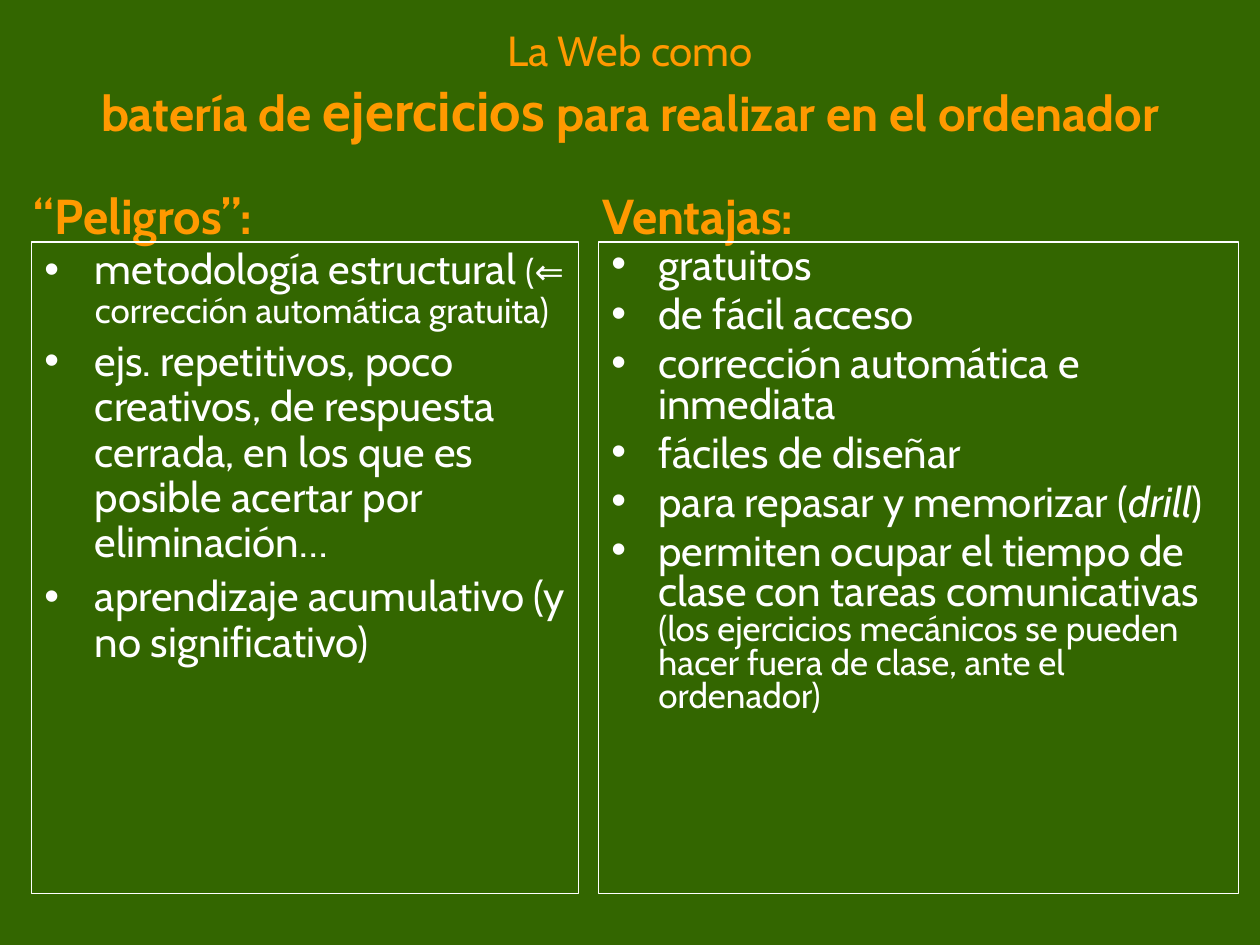
from dataclasses import dataclass

from lxml.etree import SubElement
from pptx import Presentation
from pptx.dml.color import RGBColor as RGB
from pptx.enum.text import MSO_ANCHOR as ANCHOR, MSO_AUTO_SIZE as AUTO, PP_ALIGN as ALIGN
from pptx.oxml.ns import qn
from pptx.util import Cm, Pt


@dataclass(frozen=True)
class Theme:
    font: str = "Cabin"
    back: RGB = RGB(0x33, 0x66, 0x00)
    accent: RGB = RGB(0xFF, 0x99, 0x00)
    text: RGB = RGB(0xFF, 0xFF, 0xFF)
    note: int = 20
    body: int = 24
    head: int = 28
    big: int = 32
    gap: int = 5
    border: float = 0.75


def add_text(p, text, font, size, color, bold=False, italic=False):
    r = p.add_run()
    r.text = text
    r.font.name = font
    r.font.size = Pt(size)
    r.font.color.rgb = color
    r.font.bold = bold
    r.font.italic = italic


class Deck:
    def __init__(self, theme):
        self.theme = theme
        self.prs = Presentation()
        self.prs.slide_width, self.prs.slide_height = Cm(25.4), Cm(19.05)

    def add_slide(self):
        self.s = self.prs.slides.add_slide(self.prs.slide_layouts.get_by_name("Comparison"))
        self.s.background.fill.solid()
        self.s.background.fill.fore_color.rgb = self.theme.back

    def place(self, idx, box, anchor):
        sp = next(ph for ph in self.s.placeholders if ph.placeholder_format.idx == idx)
        sp.left, sp.top, sp.width, sp.height = [Cm(v) for v in box]
        tf = sp.text_frame
        tf.word_wrap = True
        tf.auto_size = AUTO.NONE
        tf.vertical_anchor = anchor
        return sp

    def fill_text(self, tf, paragraphs, color):
        for i, runs in enumerate(paragraphs):
            p = tf.add_paragraph() if i else tf.paragraphs[0]
            for text, style in runs:
                add_text(p, text, self.theme.font, color=color, **style)
        return tf.paragraphs

    def title(self, box, lines):
        sp = self.place(0, box, ANCHOR.MIDDLE)
        for p in self.fill_text(sp.text_frame, lines, self.theme.accent):
            p.alignment = ALIGN.CENTER

    def heading(self, idx, box, text):
        sp = self.place(idx, box, ANCHOR.TOP)
        style = dict(size=self.theme.head, bold=True)
        for p in self.fill_text(sp.text_frame, [[(text, style)]], self.theme.accent):
            p.space_before = Pt(self.theme.gap)

    def bullets(self, idx, box, items, indent, spacing):
        sp = self.place(idx, box, ANCHOR.TOP)
        sp.line.color.rgb = self.theme.text
        sp.line.width = Pt(self.theme.border)
        for p in self.fill_text(sp.text_frame, items, self.theme.text):
            p.line_spacing = spacing
            p.space_before = Pt(self.theme.gap)
            pPr = p._p.get_or_add_pPr()
            pPr.set("marL", str(Cm(indent)))
            pPr.set("indent", str(-Cm(indent)))
            SubElement(pPr, qn("a:buChar")).set("char", "•")


def main():
    theme = Theme()
    body, note = dict(size=theme.body), dict(size=theme.note)
    strong = dict(size=theme.head, bold=True)
    top, height = 4.88, 13.13
    head_top, head_height = 3.61, 1.47

    deck = Deck(theme)
    deck.add_slide()
    deck.title((0, 0.2, 25.4, 2.97), [
        [("La Web como", body)],
        [("batería de ", strong),
         ("ejercicios", dict(size=theme.big, bold=True)),
         (" para realizar en el ordenador", strong)],
    ])
    deck.heading(1, (0.43, head_top, 8.46, head_height), "“Peligros”:")
    deck.bullets(2, (0.64, top, 11.02, height), [
        [("metodología estructural ", body),
         ("(⇐ corrección automática gratuita)", note)],
        [("ejs. repetitivos, poco creativos, de respuesta cerrada, "
          "en los que es posible acertar por eliminación…", body)],
        [("aprendizaje acumulativo (y no significativo)", body)],
    ], indent=1.02, spacing=0.9)
    deck.heading(3, (11.89, head_top, 5.46, head_height), "Ventajas:")
    deck.bullets(4, (12.07, top, 12.9, height), [
        [("gratuitos", body)],
        [("de fácil acceso", body)],
        [("corrección automática e inmediata", body)],
        [("fáciles de diseñar", body)],
        [("para repasar y memorizar (", body),
         ("drill", dict(size=theme.body, italic=True)),
         (")", body)],
        [("permiten ocupar el tiempo de clase con tareas comunicativas ", body),
         ("(los ejercicios mecánicos se pueden hacer fuera de clase, "
          "ante el ordenador)", note)],
    ], indent=0.95, spacing=0.8)
    deck.prs.save("out.pptx")


if __name__ == "__main__":
    main()
